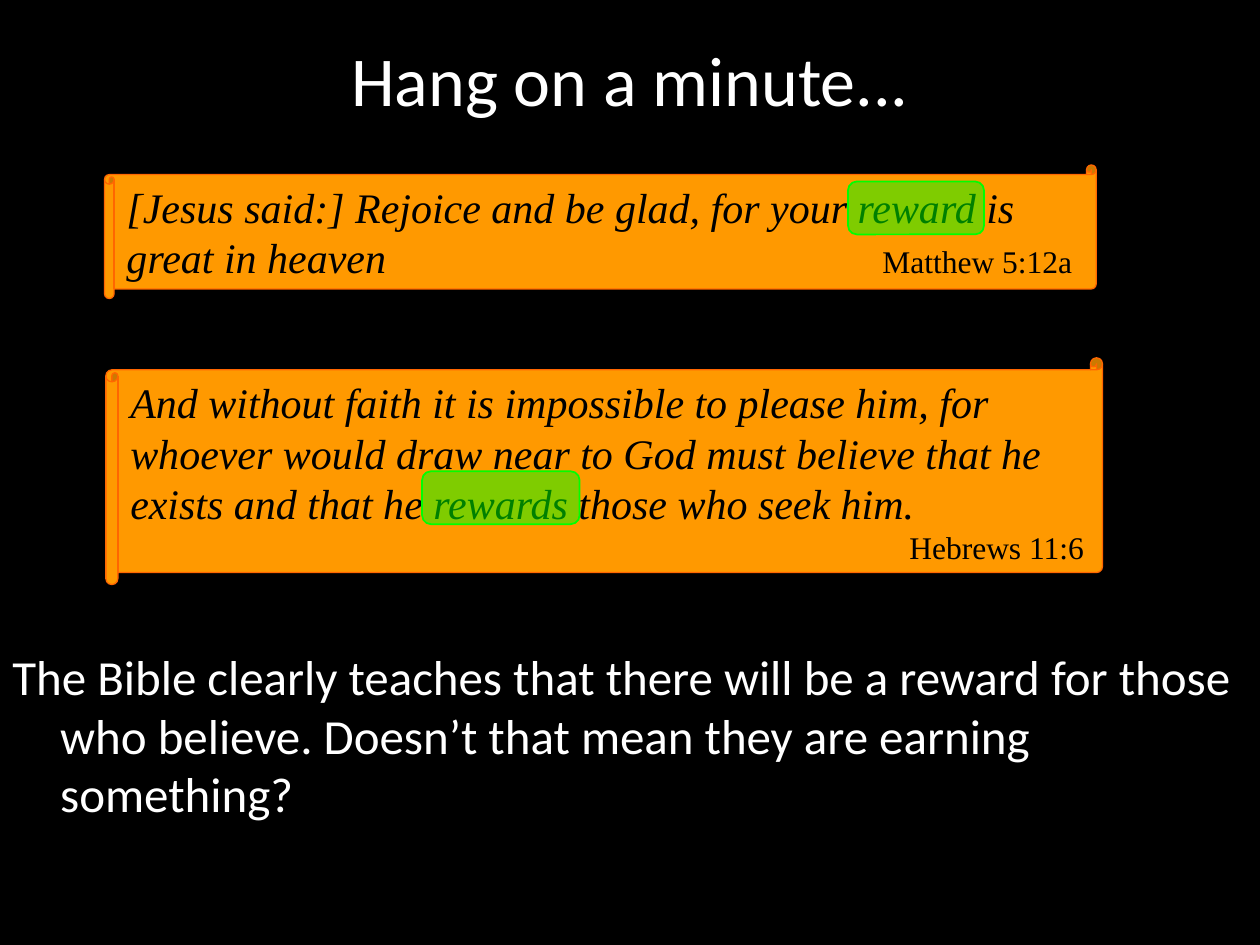
from dataclasses import dataclass

from lxml.etree import SubElement
from pptx import Presentation
from pptx.dml.color import RGBColor as RGB
from pptx.enum.shapes import MSO_SHAPE as Shape
from pptx.enum.text import MSO_ANCHOR as Anchor, PP_ALIGN as Align
from pptx.oxml.ns import qn
from pptx.util import Inches, Pt


@dataclass(frozen=True)
class Theme:
    back: RGB = RGB(0, 0, 0)
    light: RGB = RGB(255, 255, 255)
    dark: RGB = RGB(0, 0, 0)
    scroll: RGB = RGB(0xFF, 0x99, 0x00)
    edge: RGB = RGB(0xFF, 0x66, 0x00)
    mark: RGB = RGB(0, 0xFF, 0)
    sans: str = "Calibri"
    serif: str = "Times New Roman"
    head: int = 40
    body: int = 28
    verse: int = 24
    cite: int = 18


THEME = Theme()


def style(run, face, size, color, italic=False):
    font = run.font
    font.name, font.size, font.italic = face, Pt(size), italic
    font.color.rgb = color


def add_box(slide, kind, box, adjust, fill, edge, width):
    shape = slide.shapes.add_shape(kind, *map(Inches, box))
    shape.adjustments[0] = adjust
    shape.shadow.inherit = False
    shape.fill.solid()
    shape.fill.fore_color.rgb = fill
    shape.line.color.rgb = edge
    shape.line.width = Pt(width)
    return shape


def add_title(slide, box, text):
    title = slide.shapes.title
    title.left, title.top, title.width, title.height = map(Inches, box)
    frame = title.text_frame
    frame.text = text
    frame.vertical_anchor = Anchor.MIDDLE
    para = frame.paragraphs[0]
    para.alignment = Align.CENTER
    style(para.runs[0], THEME.sans, THEME.head, THEME.light)


def add_body(slide, box, text):
    frame = slide.shapes.add_textbox(*map(Inches, box)).text_frame
    frame.word_wrap = True
    frame.text = text
    para = frame.paragraphs[0]
    para.space_before = Pt(THEME.body * 0.2)
    props = para._p.get_or_add_pPr()
    props.set("marL", str(Inches(0.38)))
    props.set("indent", str(Inches(-0.38)))
    style(para.runs[0], THEME.sans, THEME.body, THEME.light)


def add_verse(slide, box, curl, verse, cite, tab=None):
    """Put the citation at a tab stop after the verse, or on its own line."""
    shape = add_box(slide, Shape.HORIZONTAL_SCROLL, box, curl,
                    THEME.scroll, THEME.edge, 0.75)
    frame = shape.text_frame
    frame.word_wrap = True
    frame.vertical_anchor = Anchor.MIDDLE
    first = frame.paragraphs[0]
    first.alignment = Align.LEFT
    quote = first.add_run()
    if tab:
        quote.text = verse + "\t"
        stops = SubElement(first._p.get_or_add_pPr(), qn("a:tabLst"))
        SubElement(stops, qn("a:tab"), pos=str(Inches(tab)), algn="l")
        source = first.add_run()
    else:
        quote.text = verse
        last = frame.add_paragraph()
        last.alignment = Align.RIGHT
        source = last.add_run()
    source.text = cite
    style(quote, THEME.serif, THEME.verse, THEME.dark, italic=True)
    style(source, THEME.serif, THEME.cite, THEME.dark)


def add_mark(slide, box):
    """Lay a half-transparent highlight over a word."""
    shape = add_box(slide, Shape.ROUNDED_RECTANGLE, box, 0.167,
                    THEME.mark, THEME.mark, 1)
    color = shape._element.spPr.find(qn("a:solidFill"))[0]
    SubElement(color, qn("a:alpha"), val="50000")


def main():
    deck = Presentation()
    deck.slide_width, deck.slide_height = Inches(10), Inches(7.5)
    slide = deck.slides.add_slide(deck.slide_layouts[5])
    slide.background.fill.solid()
    slide.background.fill.fore_color.rgb = THEME.back

    add_title(slide, (0, 0, 10, 1.25), "Hang on a minute...")
    add_body(slide, (0, 5.08, 10, 2.42),
             "The Bible clearly teaches that there will be a reward for those "
             "who believe. Doesn’t that mean they are earning something?")
    add_verse(slide, (0.83, 1.31, 7.87, 1.06), 0.072,
              "[Jesus said:] Rejoice and be glad, for your reward is "
              "great in heaven", "Matthew 5:12a", tab=6)
    add_verse(slide, (0.84, 2.84, 7.91, 1.8), 0.053,
              "And without faith it is impossible to please him, for whoever "
              "would draw near to God must believe that he exists and that he "
              "rewards those who seek him.", "Hebrews 11:6")
    for box in ((6.73, 1.44, 1.08, 0.42), (3.35, 3.74, 1.25, 0.42)):
        add_mark(slide, box)
    deck.save("out.pptx")


if __name__ == "__main__":
    main()
